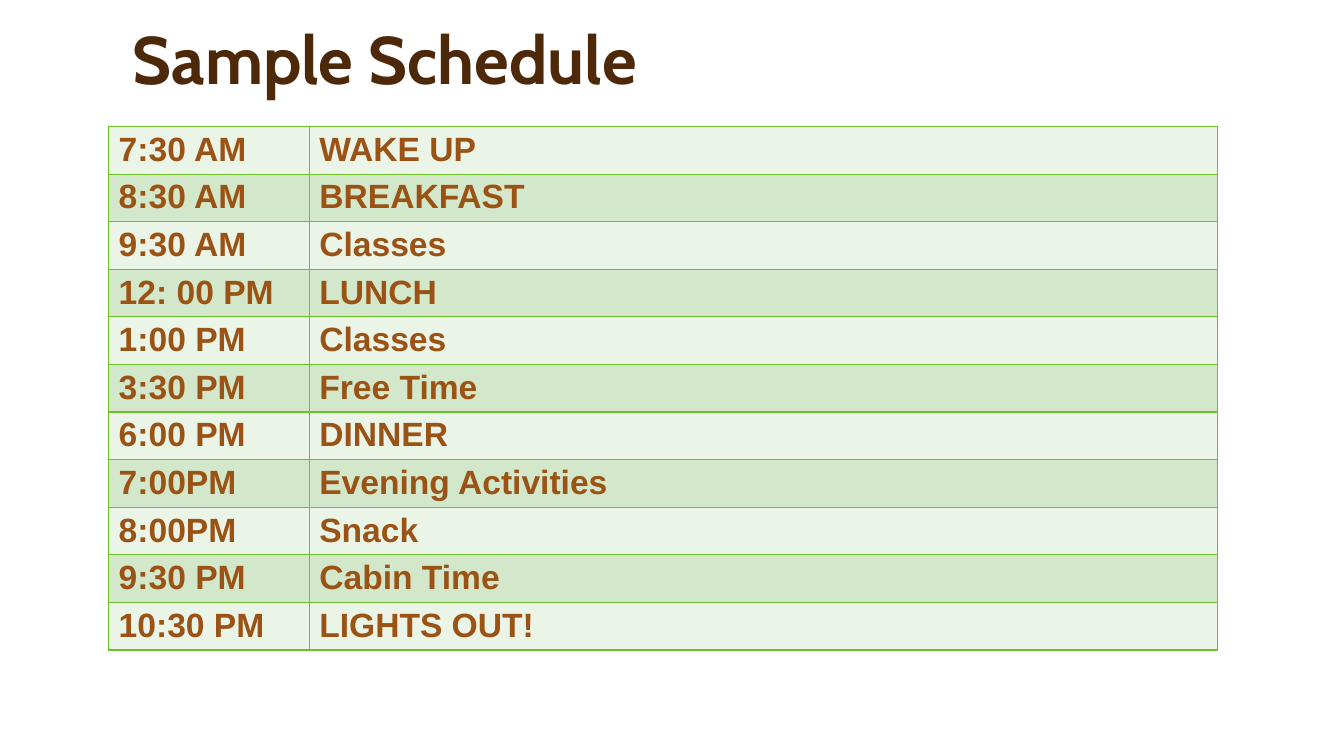
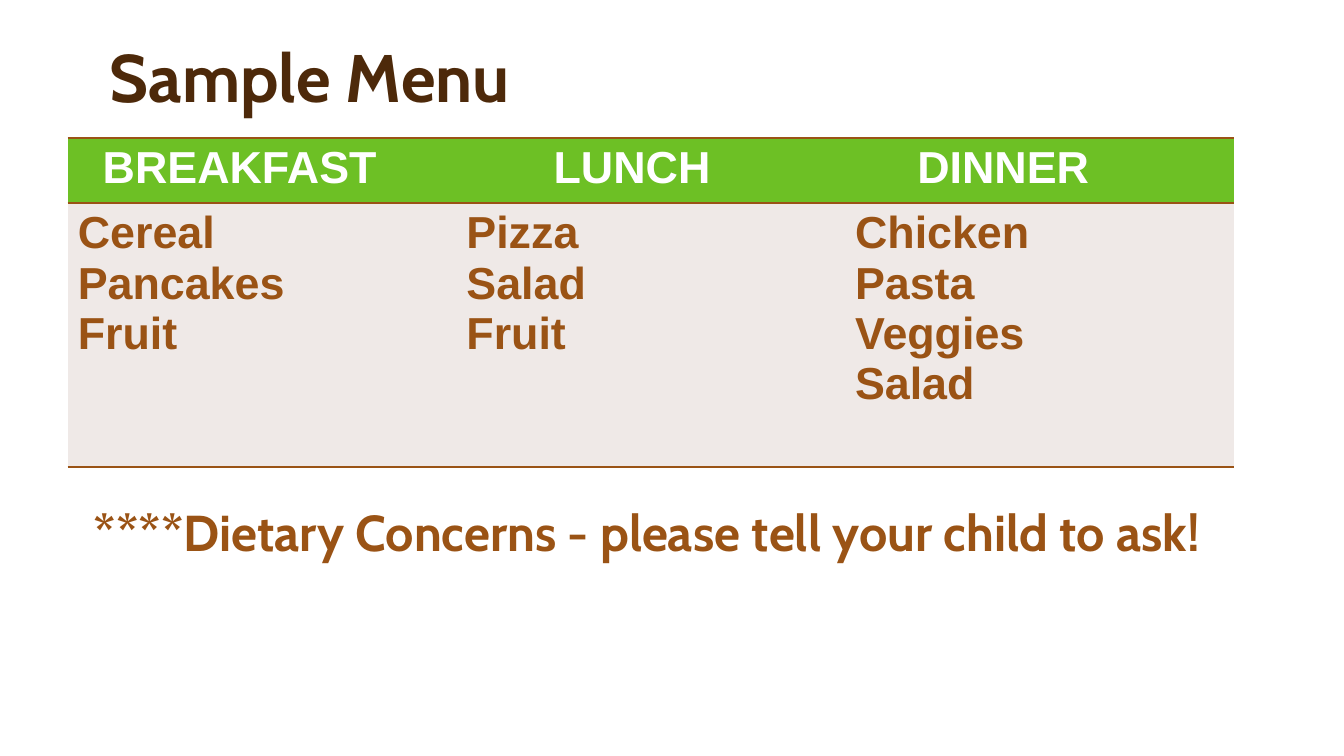
from pptx import Presentation
from pptx.dml.color import RGBColor
from pptx.enum.text import MSO_ANCHOR, MSO_AUTO_SIZE, PP_ALIGN
from pptx.oxml.ns import qn
from pptx.util import Pt
from lxml.etree import SubElement

# Shared colours and fonts
DARK_BROWN = RGBColor(0x4D, 0x29, 0x0A)
BROWN = RGBColor(0x9A, 0x53, 0x15)
GREEN = RGBColor(0x6D, 0xC0, 0x25)
PALE_GREEN = RGBColor(0xEA, 0xF4, 0xE7)
LIGHT_GREEN = RGBColor(0xD3, 0xE8, 0xCB)
PALE_BROWN = RGBColor(0xEF, 0xE9, 0xE7)
WHITE = RGBColor(0xFF, 0xFF, 0xFF)
DISPLAY_FONT = "Cabin"
TABLE_FONT = "Arial"
SIDE_INSET = 7.2
TITLE_ONLY = 5

SCHEDULE = [
    ("7:30 AM", "WAKE UP"),
    ("8:30 AM", "BREAKFAST"),
    ("9:30 AM", "Classes"),
    ("12: 00 PM", "LUNCH"),
    ("1:00 PM", "Classes"),
    ("3:30 PM", "Free Time"),
    ("6:00 PM", "DINNER"),
    ("7:00PM", "Evening Activities"),
    ("8:00PM", "Snack"),
    ("9:30 PM", "Cabin Time"),
    ("10:30 PM", "LIGHTS OUT!"),
]

# Meal name, indent of its heading, dishes
MENU = [
    ("BREAKFAST", 17.8, ["Cereal", "Pancakes", "Fruit"]),
    ("LUNCH", 62.3, ["Pizza", "Salad", "Fruit"]),
    ("DINNER", 44.5, ["Chicken", "Pasta", "Veggies", "Salad"]),
]


def write_lines(frame, lines, font_name, size, color):
    frame.text = "\n".join(lines)
    for paragraph in frame.paragraphs:
        paragraph.alignment = PP_ALIGN.LEFT
        font = paragraph.font
        font.name, font.size, font.bold = font_name, Pt(size), True
        font.color.rgb = color


def add_titled_page(deck, title, left, top, height, indent=0):
    page = deck.slides.add_slide(deck.slide_layouts[TITLE_ONLY])
    box = page.shapes.title
    box.left, box.top = Pt(left), Pt(top)
    box.width, box.height = Pt(792), Pt(height)
    frame = box.text_frame
    frame.auto_size = MSO_AUTO_SIZE.NONE
    frame.word_wrap = True
    frame.vertical_anchor = MSO_ANCHOR.BOTTOM
    frame.margin_left = Pt(SIDE_INSET + indent)
    write_lines(frame, [title], DISPLAY_FONT, 48, DARK_BROWN)
    frame.paragraphs[0].line_spacing = 0.9
    return page


def add_plain_table(page, left, top, widths, heights):
    table = page.shapes.add_table(
        len(heights), len(widths), Pt(left), Pt(top),
        Pt(sum(widths)), Pt(sum(heights))).table
    table.first_row = table.horz_banding = False
    for column, width in zip(table.columns, widths):
        column.width = Pt(width)
    for row, height in zip(table.rows, heights):
        row.height = Pt(height)
    return table


def set_borders(cell, color, width, ruled_sides):
    properties = cell._tc.get_or_add_tcPr()
    for side in "LRTB":
        line = SubElement(properties, qn(f"a:ln{side}"), w=str(Pt(width)))
        if side in ruled_sides:
            fill = SubElement(line, qn("a:solidFill"))
            SubElement(fill, qn("a:srgbClr"), val=str(color))
        else:
            SubElement(line, qn("a:noFill"))


def fill_cell(cell, lines, size, color, background, indent=0, inset=3.6):
    cell.margin_left = Pt(SIDE_INSET + indent)
    cell.margin_top = cell.margin_bottom = Pt(inset)
    cell.fill.solid()
    cell.fill.fore_color.rgb = background
    write_lines(cell.text_frame, lines, TABLE_FONT, size, color)


def add_note(page, text, left, top, width, height):
    box = page.shapes.add_textbox(Pt(left), Pt(top), Pt(width), Pt(height))
    box.text_frame.word_wrap = True
    write_lines(box.text_frame, [text], DISPLAY_FONT, 36, BROWN)


def build_schedule(deck):
    page = add_titled_page(deck, "Sample Schedule", 65.5, 23.8, 50.4, indent=22)
    table = add_plain_table(page, 77.6, 90.4, [143.3, 648.7],
                            [34] * len(SCHEDULE))
    for row, entry in enumerate(SCHEDULE):
        background = LIGHT_GREEN if row % 2 else PALE_GREEN
        for column, text in enumerate(entry):
            cell = table.cell(row, column)
            set_borders(cell, GREEN, 1, "LRTB")
            fill_cell(cell, [text], 24, BROWN, background, inset=3.2)


def build_menu(deck):
    page = add_titled_page(deck, "Sample Menu", 71.3, 18, 69.1)
    table = add_plain_table(page, 48.4, 98.6, [277.6] * len(MENU),
                            [46.6, 188.6])
    for column, (meal, indent, dishes) in enumerate(MENU):
        heading, body = table.cell(0, column), table.cell(1, column)
        for cell in (heading, body):
            set_borders(cell, BROWN, 2, "TB")
        fill_cell(heading, [meal], 32, WHITE, GREEN, indent)
        fill_cell(body, dishes, 32, BROWN, PALE_BROWN)
    add_note(page, "****Dietary Concerns - please tell your child to ask!",
             59.8, 354.2, 833, 51.1)


def main():
    deck = Presentation()
    deck.slide_width, deck.slide_height = Pt(960), Pt(540)
    build_schedule(deck)
    build_menu(deck)
    deck.save("out.pptx")


if __name__ == "__main__":
    main()
